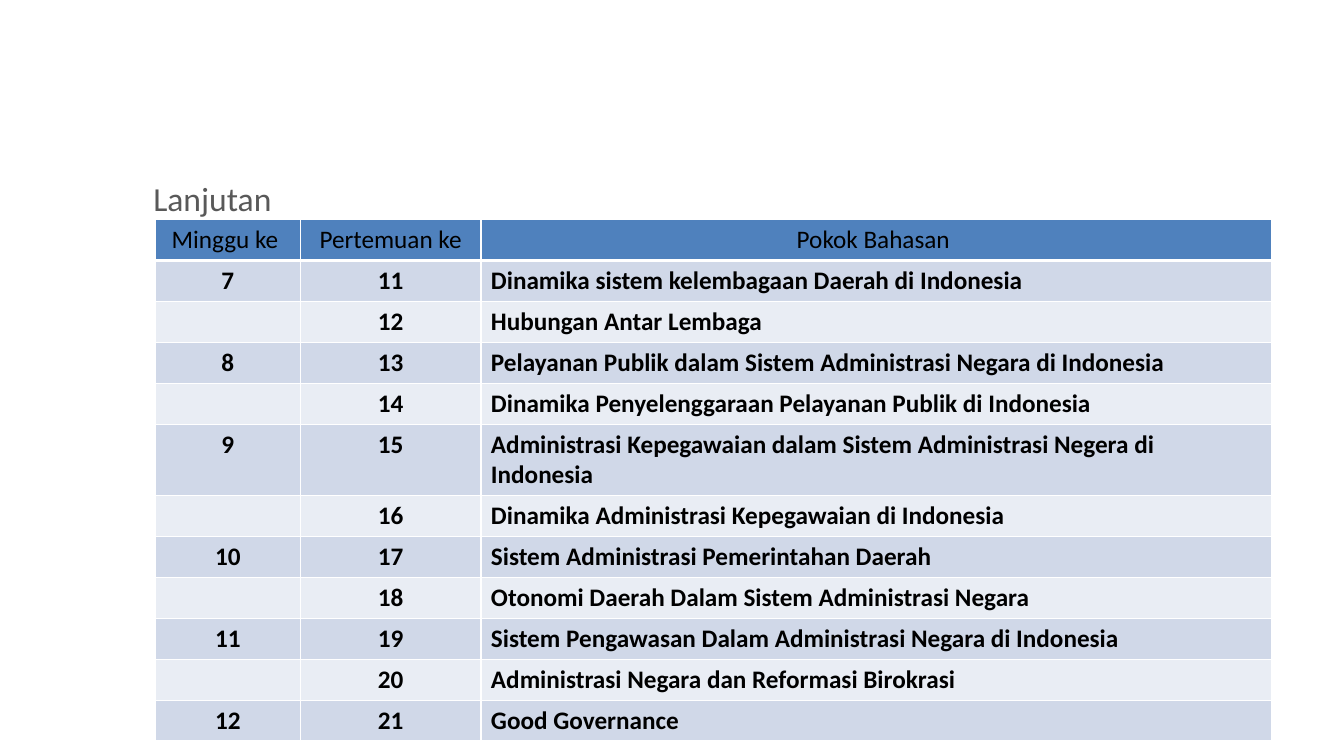
from dataclasses import dataclass

from lxml.etree import SubElement
from pptx import Presentation
from pptx.dml.color import RGBColor as Color
from pptx.enum.text import MSO_ANCHOR as Anchor, PP_ALIGN as Align
from pptx.oxml.ns import qn
from pptx.slide import Slide
from pptx.table import _Cell as Cell
from pptx.text.text import _Paragraph as Paragraph
from pptx.util import Inches, Pt


@dataclass(frozen=True)
class Theme:
    font: str = "Calibri"
    title_size: int = 24
    table_size: int = 18
    title_color: str = "595959"
    text_color: str = "000000"
    header_fill: str = "4F81BD"
    band_fills: tuple[str, str] = ("D0D8E8", "E9EDF4")
    border_color: str = "FFFFFF"
    border_width: int = 1
    header_rule_width: int = 3


@dataclass(frozen=True)
class Session:
    week: str
    meeting: str
    topic: str


THEME = Theme()
HEADINGS = Session("Minggu ke ", "Pertemuan ke", "Pokok Bahasan ")
FIRST_WEEK, FIRST_MEETING, MEETINGS_PER_WEEK = 7, 11, 2
TOPICS = (
    "Dinamika sistem kelembagaan Daerah di Indonesia",
    "Hubungan Antar Lembaga",
    "Pelayanan Publik dalam Sistem Administrasi Negara di Indonesia",
    "Dinamika Penyelenggaraan Pelayanan Publik di Indonesia",
    "Administrasi Kepegawaian dalam Sistem Administrasi Negera di Indonesia",
    "Dinamika Administrasi Kepegawaian di Indonesia",
    "Sistem Administrasi Pemerintahan Daerah",
    "Otonomi Daerah Dalam Sistem Administrasi Negara",
    "Sistem Pengawasan Dalam Administrasi Negara di Indonesia",
    "Administrasi Negara dan Reformasi Birokrasi",
    "Good Governance",
)
COLUMN_WIDTHS = (1.44, 1.79, 7.84)
ROW_HEIGHT = 0.4


def plan_sessions() -> list[Session]:
    """Number the topics, showing each week only at its first meeting."""
    sessions = []
    for index, topic in enumerate(TOPICS):
        week, meeting_in_week = divmod(index, MEETINGS_PER_WEEK)
        week_label = "" if meeting_in_week else str(FIRST_WEEK + week)
        sessions.append(Session(week_label, str(FIRST_MEETING + index), topic))
    return sessions


def style_paragraph(paragraph: Paragraph, size: int, color: str,
                    align: Align, bold: bool = False) -> None:
    paragraph.alignment = align
    font = paragraph.font
    font.name, font.size, font.bold = THEME.font, Pt(size), bold
    font.color.rgb = Color.from_string(color)


def add_borders(cell: Cell, bottom_width: int) -> None:
    properties = cell._tc.get_or_add_tcPr()
    for side in ("L", "R", "T", "B"):
        width = bottom_width if side == "B" else THEME.border_width
        line = SubElement(properties, qn(f"a:ln{side}"), w=str(Pt(width)))
        fill = SubElement(line, qn("a:solidFill"))
        SubElement(fill, qn("a:srgbClr"), val=THEME.border_color)


def fill_cell(cell: Cell, text: str, row: int, column: int) -> None:
    is_header = row == 0
    add_borders(cell, THEME.header_rule_width if is_header else THEME.border_width)
    cell.fill.solid()
    cell.fill.fore_color.rgb = Color.from_string(
        THEME.header_fill if is_header else THEME.band_fills[(row - 1) % 2])
    cell.text = text
    is_topic = column == 2 and not is_header
    style_paragraph(cell.text_frame.paragraphs[0], THEME.table_size, THEME.text_color,
                    Align.LEFT if is_topic else Align.CENTER, bold=not is_header)


def add_title(slide: Slide) -> None:
    title = slide.shapes.title
    title.left, title.top = Inches(1.42), Inches(1.7)
    title.width, title.height = Inches(11.02), Inches(0.47)
    frame = title.text_frame
    frame.text = "Lanjutan"
    frame.vertical_anchor = Anchor.BOTTOM
    frame.margin_top = frame.margin_bottom = 0
    style_paragraph(frame.paragraphs[0], THEME.title_size, THEME.title_color, Align.LEFT)


def add_schedule(slide: Slide) -> None:
    rows = [HEADINGS, *plan_sessions()]
    schedule = slide.shapes.add_table(
        len(rows), len(COLUMN_WIDTHS), Inches(1.54), Inches(2.18),
        Inches(sum(COLUMN_WIDTHS)), Inches(ROW_HEIGHT * len(rows))).table
    for column, width in zip(schedule.columns, COLUMN_WIDTHS):
        column.width = Inches(width)
    for row, session in enumerate(rows):
        for column, text in enumerate((session.week, session.meeting, session.topic)):
            fill_cell(schedule.cell(row, column), text, row, column)


def main() -> None:
    deck = Presentation()
    deck.slide_width, deck.slide_height = Inches(13.33), Inches(7.5)
    slide = deck.slides.add_slide(deck.slide_layouts.get_by_name("Title Only"))
    add_title(slide)
    add_schedule(slide)
    deck.save("out.pptx")


if __name__ == "__main__":
    main()
